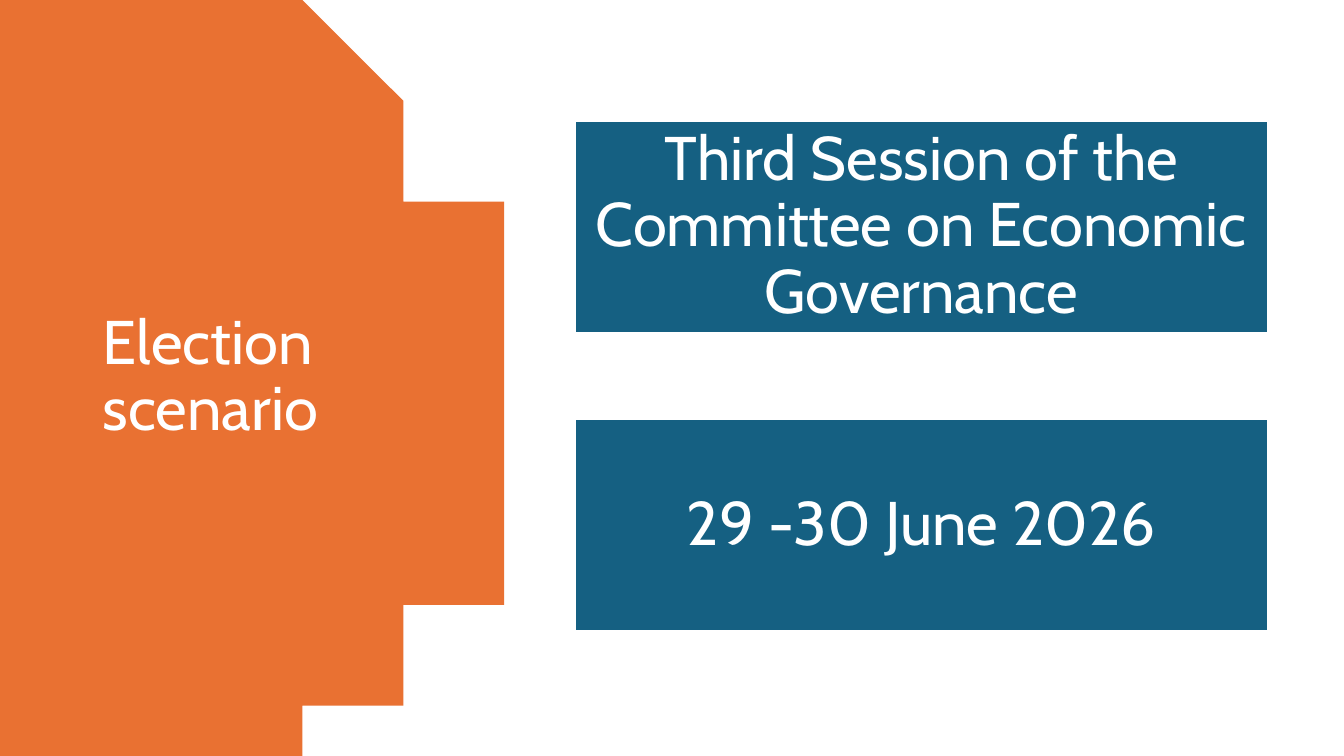
from math import asin, cos, sin

from pptx import Presentation
from pptx.dml.color import RGBColor
from pptx.enum.shapes import MSO_SHAPE
from pptx.enum.text import MSO_ANCHOR, PP_ALIGN
from pptx.util import Inches, Pt

RECTANGLE = MSO_SHAPE.RECTANGLE
MIDDLE = MSO_ANCHOR.MIDDLE
LEFT, CENTER = PP_ALIGN.LEFT, PP_ALIGN.CENTER

WIDTH, HEIGHT = 13.33, 7.5
ORANGE, BLUE, WHITE = "E97132", "156082", "FFFFFF"


def color(hex_value):
    return RGBColor.from_string(hex_value)


def write(shape, text, align):
    frame = shape.text_frame
    frame.word_wrap = True
    frame.vertical_anchor = MIDDLE
    paragraph = frame.paragraphs[0]
    paragraph.text = text
    paragraph.alignment = align
    paragraph.line_spacing = 0.9
    paragraph.font.name = "Cabin"
    paragraph.font.size = Pt(44)
    paragraph.font.color.rgb = color(WHITE)
    return frame


prs = Presentation()
prs.slide_width, prs.slide_height = Inches(WIDTH), Inches(HEIGHT)
slide = prs.slides.add_slide(prs.slide_layouts[6])

# Orange disc, cut off by the left, top and bottom edges
radius, center_x, center_y = 4.4, 0.53, HEIGHT / 2
half_angle = asin(center_y / radius)
steps = 120
arc = []
for step in range(steps + 1):
    angle = half_angle * (2 * step / steps - 1)
    arc.append((center_x + radius * cos(angle), center_y + radius * sin(angle)))
outline = slide.shapes.build_freeform(0, 0, scale=Inches(1))
outline.add_line_segments(arc + [(0, HEIGHT)], close=True)
disc = outline.convert_to_shape()
disc.shadow.inherit = False
disc.fill.solid()
disc.fill.fore_color.rgb = color(ORANGE)
disc.line.fill.background()

# Title on the disc
title = slide.shapes.add_textbox(Inches(0.92), Inches(0.7), Inches(3.23), Inches(6.09))
write(title, "Election scenario", LEFT)

# Session name and date, stacked in two equal panels
panel_left, panel_top, panel_width, panel_height = 5.7, 1.2, 6.88, 2.1
panel_pitch = 2.96
panel_texts = ["Third Session of the Committee on Economic Governance", "29 -30 June 2026"]
for row, text in enumerate(panel_texts):
    panel = slide.shapes.add_shape(
        RECTANGLE, Inches(panel_left), Inches(panel_top + row * panel_pitch),
        Inches(panel_width), Inches(panel_height))
    panel.shadow.inherit = False
    panel.fill.solid()
    panel.fill.fore_color.rgb = color(BLUE)
    panel.line.color.rgb = color(WHITE)
    panel.line.width = Pt(1.5)
    frame = write(panel, text, CENTER)
    frame.margin_left = frame.margin_right = Inches(0.03)
    frame.margin_top = frame.margin_bottom = Inches(0.03)

prs.save("out.pptx")
